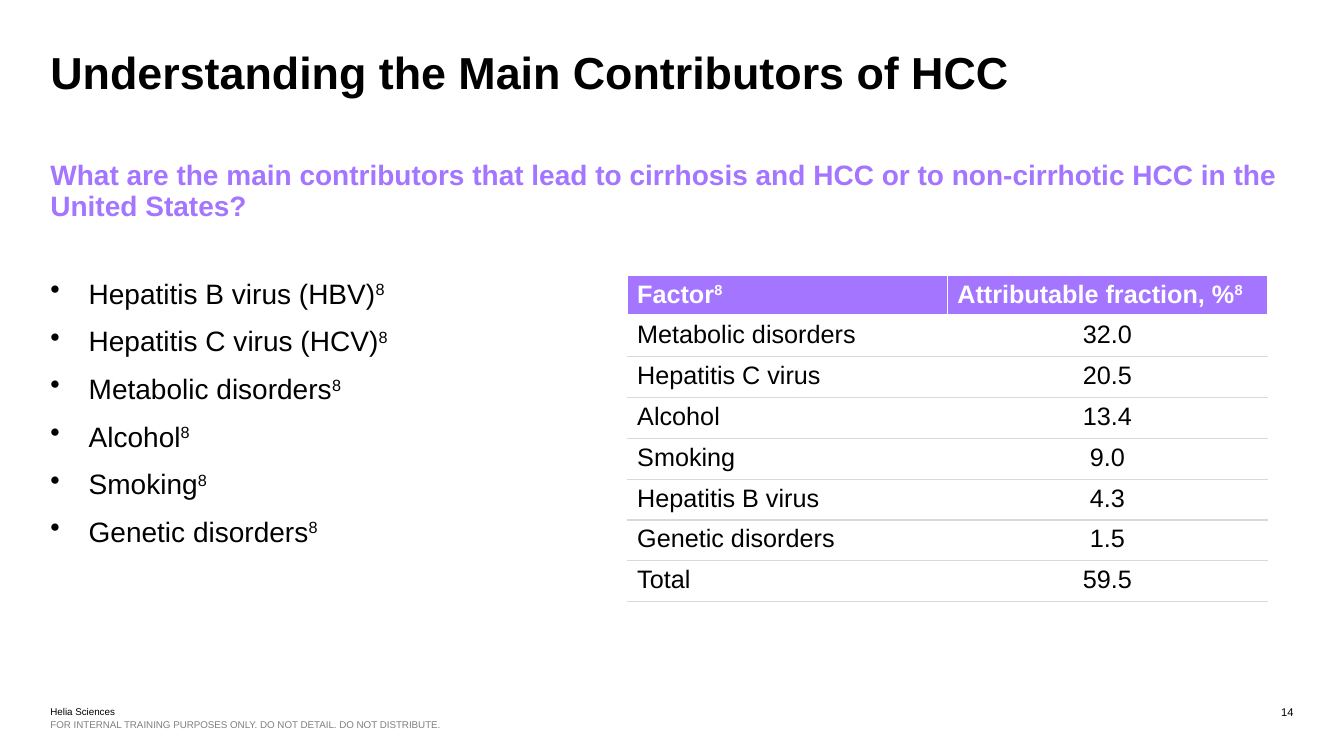
from lxml import etree
from pptx import Presentation, util as u
from pptx.dml.color import RGBColor
from pptx.enum import text
from pptx.oxml.ns import qn

BLACK = RGBColor(0, 0, 0)
WHITE = RGBColor(255, 255, 255)
GREY = RGBColor(128, 128, 128)
RULE = RGBColor(0xD9, 0xD9, 0xD9)
PURPLE = RGBColor(0xA4, 0x75, 0xFF)
LEFT, CENTER, RIGHT = text.PP_ALIGN.LEFT, text.PP_ALIGN.CENTER, text.PP_ALIGN.RIGHT
MARGIN = 0.5
WIDTH = 13.33 - 2 * MARGIN

prs = Presentation()
prs.slide_width, prs.slide_height = u.Inches(13.33), u.Inches(7.5)
s = prs.slides.add_slide(prs.slide_layouts[6])


def write(p, words, size, color, bold=False, align=LEFT):
    f = p.font
    f.name, f.size, f.bold = "Arial", u.Pt(size), bold
    f.color.rgb = color
    p.alignment = align
    for i, part in enumerate(words.split("^")):
        r = p.add_run()
        r.text = part
        if i:
            r._r.get_or_add_rPr().set("baseline", "30000")


def add_box(x, y, w, h):
    tf = s.shapes.add_textbox(*map(u.Inches, (x, y, w, h))).text_frame
    tf.word_wrap = True
    tf.margin_left = tf.margin_right = tf.margin_top = tf.margin_bottom = 0
    return tf


labels = [
    (MARGIN, 0.5, WIDTH, 0.98, "Understanding the Main Contributors of HCC", 32, BLACK, True, LEFT, 34),
    (MARGIN, 1.59, WIDTH, 0.63,
     "What are the main contributors that lead to cirrhosis and HCC or to non-cirrhotic HCC in the United States?",
     20, PURPLE, True, LEFT, 22),
    (MARGIN, 7, 1.39, 0.12, "Helia Sciences", 7, BLACK, False, LEFT, None),
    (MARGIN, 7.13, 6.47, 0.12, "FOR INTERNAL TRAINING PURPOSES ONLY. DO NOT DETAIL. DO NOT DISTRIBUTE.",
     7, GREY, False, LEFT, None),
    (MARGIN + WIDTH - 3, 7, 3, 0.4, "14", 8, BLACK, False, RIGHT, None),
]
for x, y, w, h, words, size, color, bold, align, spacing in labels:
    p = add_box(x, y, w, h).paragraphs[0]
    write(p, words, size, color, bold, align)
    if spacing:
        p.line_spacing = u.Pt(spacing)

factors = ["Hepatitis B virus (HBV)", "Hepatitis C virus (HCV)", "Metabolic disorders",
           "Alcohol", "Smoking", "Genetic disorders"]
tf = add_box(MARGIN, 2.74, WIDTH, 4.26)
for i, factor in enumerate(factors):
    p = tf.add_paragraph() if i else tf.paragraphs[0]
    p.space_before = u.Pt(10)
    write(p, factor + "^8", 20, BLACK)
    pPr = p._p.get_or_add_pPr()
    pPr.set("marL", str(u.Inches(0.38)))
    pPr.set("indent", str(-u.Inches(0.38)))
    bullet = etree.Element(qn("a:buChar"), char="•")
    pPr.find(qn("a:defRPr")).addprevious(bullet)

rows = [
    ("Factor^8", "Attributable fraction, %^8"),
    ("Metabolic disorders", "32.0"),
    ("Hepatitis C virus", "20.5"),
    ("Alcohol", "13.4"),
    ("Smoking", "9.0"),
    ("Hepatitis B virus", "4.3"),
    ("Genetic disorders", "1.5"),
    ("Total", "59.5"),
]
table = s.shapes.add_table(len(rows), 2, u.Inches(6.22), u.Inches(2.73),
                           u.Inches(6.35), u.Inches(3.24)).table
table.first_row = table.horz_banding = False
for i, row in enumerate(rows):
    header = i == 0
    for j, words in enumerate(row):
        cell = table.cell(i, j)
        align = CENTER if j and not header else LEFT
        write(cell.text_frame.paragraphs[0], words, 18, WHITE if header else BLACK, header, align)
        if header:
            cell.fill.solid()
            cell.fill.fore_color.rgb = PURPLE
        else:
            cell.fill.background()
        top = (WHITE, 1) if header else (WHITE, 3) if i == 1 else (RULE, 1)
        bottom = (WHITE, 3) if header else (RULE, 1)
        edges = {"lnL": (WHITE, 1), "lnR": (WHITE, 1), "lnT": top, "lnB": bottom}
        tcPr = cell._tc.get_or_add_tcPr()
        for k, (tag, (color, width)) in enumerate(edges.items()):
            ln = etree.Element(qn("a:" + tag), w=str(u.Pt(width)))
            fill = etree.SubElement(ln, qn("a:solidFill"))
            etree.SubElement(fill, qn("a:srgbClr"), val=str(color))
            tcPr.insert(k, ln)

prs.save("out.pptx")
